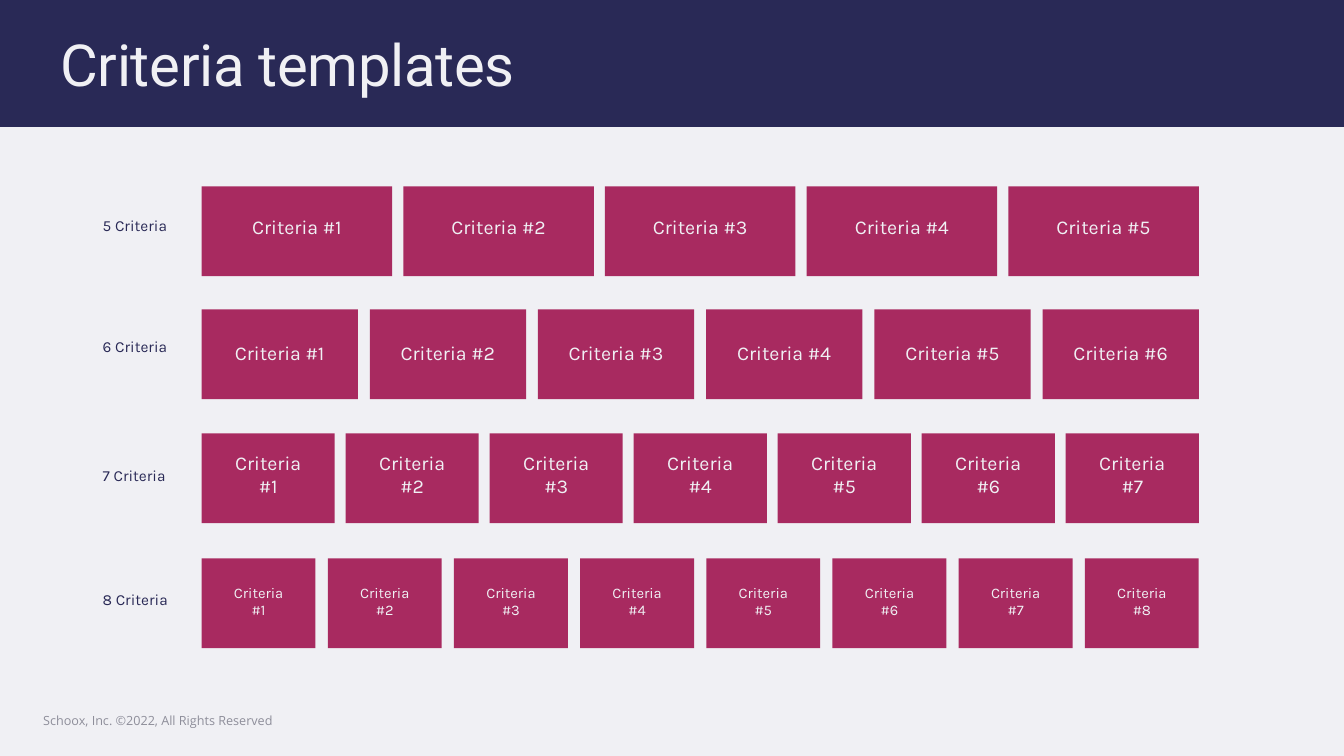
import pptx
import pptx.util
import pptx.dml.color
import pptx.enum.shapes
import pptx.enum.text

Inches = pptx.util.Inches
RGBColor = pptx.dml.color.RGBColor
ALIGN = pptx.enum.text.PP_ALIGN
ANCHOR = pptx.enum.text.MSO_ANCHOR

NAVY = RGBColor(0x29, 0x29, 0x56)
PALE = RGBColor(0xF0, 0xF0, 0xF4)
BERRY = RGBColor(0xA8, 0x2A, 0x60)
GREY = RGBColor(0x8E, 0x8E, 0x9A)

LEFT, RIGHT = 2, 11.89
TILE_H = 0.89
# count, top, tile width, then the tile text's top, width, height and size, then the row label's top
ROWS = [
    (5, 1.85, 1.89, 2.08, 1.42, 0.34, 14, 2.09),
    (6, 3.07, 1.55, 3.33, 1.16, 0.34, 14, 3.30),
    (7, 4.30, 1.32, 4.42, 0.99, 0.57, 14, 4.57),
    (8, 5.54, 1.13, 5.74, 0.84, 0.47, 10.5, 5.81),
]


def add_rect(slide, box, color):
    rect = slide.shapes.add_shape(
        pptx.enum.shapes.MSO_SHAPE.RECTANGLE, *map(Inches, box))
    rect.shadow.inherit = False
    rect.fill.solid()
    rect.fill.fore_color.rgb = color
    rect.line.fill.background()


def add_text(slide, box, text, color, align=ALIGN.LEFT, anchor=ANCHOR.TOP, **style):
    frame = slide.shapes.add_textbox(*map(Inches, box)).text_frame
    frame.word_wrap = True
    frame.vertical_anchor = anchor
    para = frame.paragraphs[0]
    para.alignment = align
    run = para.add_run()
    run.text = text
    run.font.color.rgb = color
    for key, value in style.items():
        setattr(run.font, key, value)
    return run


def add_header(slide, box):
    left, top, width, height = box
    add_rect(slide, box, NAVY)
    run = add_text(slide, (left + 0.5, top + 0.21, 10.96, height - 0.43),
                   "Criteria templates", PALE, anchor=ANCHOR.MIDDLE,
                   name="Roboto", size=pptx.util.Pt(41.4))
    run.font._element.set("spc", "-20")


def add_row(slide, row):
    """Place a row label and its evenly spaced tiles."""
    count, top, width, text_top, text_w, text_h, size, label_top = row
    add_text(slide, (0.92, label_top, 0.97, 0.29), f"{count} Criteria", NAVY,
             name="Karla", size=pptx.util.Pt(11))
    pitch = (RIGHT - LEFT - width) / (count - 1)
    for index in range(count):
        left = LEFT + index * pitch
        add_rect(slide, (left, top, width, TILE_H), BERRY)
        add_text(slide, (left + (width - text_w) / 2, text_top, text_w, text_h),
                 f"Criteria #{index + 1}", PALE, align=ALIGN.CENTER,
                 name="Karla", size=pptx.util.Pt(size))


def add_footer(slide, box):
    add_text(slide, box, "Schoox, Inc. ©2022, All Rights Reserved", GREY,
             anchor=ANCHOR.MIDDLE, name="Open Sans", size=pptx.util.Pt(9))


def main():
    deck = pptx.Presentation()
    deck.slide_width, deck.slide_height = Inches(13.33), Inches(7.5)
    slide = deck.slides.add_slide(deck.slide_layouts[6])
    slide.background.fill.solid()
    slide.background.fill.fore_color.rgb = PALE
    add_header(slide, (0, 0, 13.33, 1.26))
    for row in ROWS:
        add_row(slide, row)
    add_footer(slide, (0.33, 6.95, 3, 0.4))
    deck.save("out.pptx")


if __name__ == "__main__":
    main()
